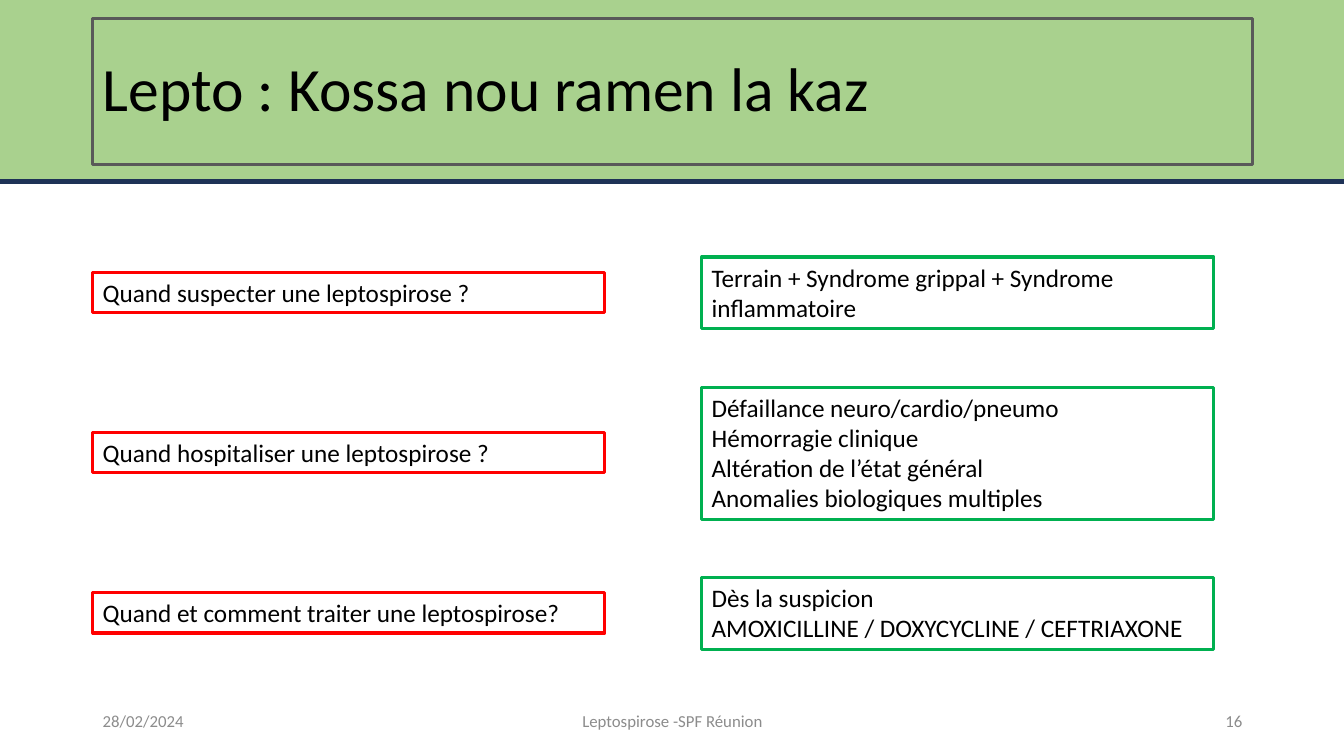
from pptx import Presentation
from pptx import util as u
from pptx.dml.color import RGBColor
from pptx.enum import shapes, text

PX = 9144
THEME = {
    "font": "Calibri",
    "banner": "A9D18E", "navy": "1E3256", "frame": "595959",
    "question": "FF0000", "answer": "00B050",
    "ink": "000000", "muted": "8C8C8C",
    "title": 44, "body": 18, "footer": 12,
}
ALIGN = text.PP_ALIGN
ANCHOR = text.MSO_ANCHOR


def color(name):
    return RGBColor.from_string(THEME[name])


def write(sp, content, size="body", ink="ink", align=ALIGN.LEFT,
          anchor=ANCHOR.TOP, fit=text.MSO_AUTO_SIZE.NONE, spacing=1.0,
          outline=None):
    tf = sp.text_frame
    tf.word_wrap = True
    tf.auto_size = fit
    tf.vertical_anchor = anchor
    for i, line in enumerate(content.split("\n")):
        p = tf.add_paragraph() if i else tf.paragraphs[0]
        p.alignment = align
        p.line_spacing = spacing
        r = p.add_run()
        r.text = line
        r.font.name = THEME["font"]
        r.font.size = u.Pt(THEME[size])
        r.font.color.rgb = color(ink)
    if outline:
        sp.fill.background()
        sp.line.color.rgb = color(outline)
        sp.line.width = u.Pt(2.25)


prs = Presentation()
prs.slide_width, prs.slide_height = 1333 * PX, 750 * PX
s = prs.slides.add_slide(prs.slide_layouts[5])

title = s.shapes.title
title.left, title.top, title.width, title.height = (
    v * PX for v in (92, 18, 1150, 145))
write(title, "Lepto : Kossa nou ramen la kaz", size="title",
      anchor=ANCHOR.MIDDLE, spacing=0.9, outline="frame")

banner = s.shapes.add_shape(shapes.MSO_SHAPE.RECTANGLE,
                            -49 * PX, -22 * PX, 1432 * PX, 202 * PX)
banner.shadow.inherit = False
banner.fill.solid()
banner.fill.fore_color.rgb = color("banner")
banner.line.color.rgb = color("navy")
banner.line.width = u.Pt(3)
title.element.addprevious(banner.element)

for x, w, align, content in (
    (92, 300, ALIGN.LEFT, "28/02/2024"),
    (442, 450, ALIGN.CENTER, "Leptospirose -SPF Réunion"),
    (942, 300, ALIGN.RIGHT, "16"),
):
    sp = s.shapes.add_textbox(x * PX, 695 * PX, w * PX, 40 * PX)
    write(sp, content, size="footer", ink="muted", align=align,
          anchor=ANCHOR.MIDDLE)

rows = (
    ("Quand suspecter une leptospirose ?", 71,
     "Terrain + Syndrome grippal + Syndrome inflammatoire"),
    ("Quand hospitaliser une leptospirose ?", 131,
     "Défaillance neuro/cardio/pneumo\nHémorragie clinique\n"
     "Altération de l’état général\nAnomalies biologiques multiples"),
    ("Quand et comment traiter une leptospirose?", 71,
     "Dès la suspicion\nAMOXICILLINE / DOXYCYCLINE / CEFTRIAXONE"),
)
for i, (question, answer_h, answer) in enumerate(rows):
    middle = 290 + 159 * i
    for x, h, content, outline in (
        (92, 40, question, "question"),
        (696, answer_h, answer, "answer"),
    ):
        sp = s.shapes.add_shape(shapes.MSO_SHAPE.RECTANGLE, x * PX,
                                (middle - h // 2) * PX, 508 * PX, h * PX)
        sp.shadow.inherit = False
        write(sp, content, fit=text.MSO_AUTO_SIZE.SHAPE_TO_FIT_TEXT,
              outline=outline)

prs.save("out.pptx")
